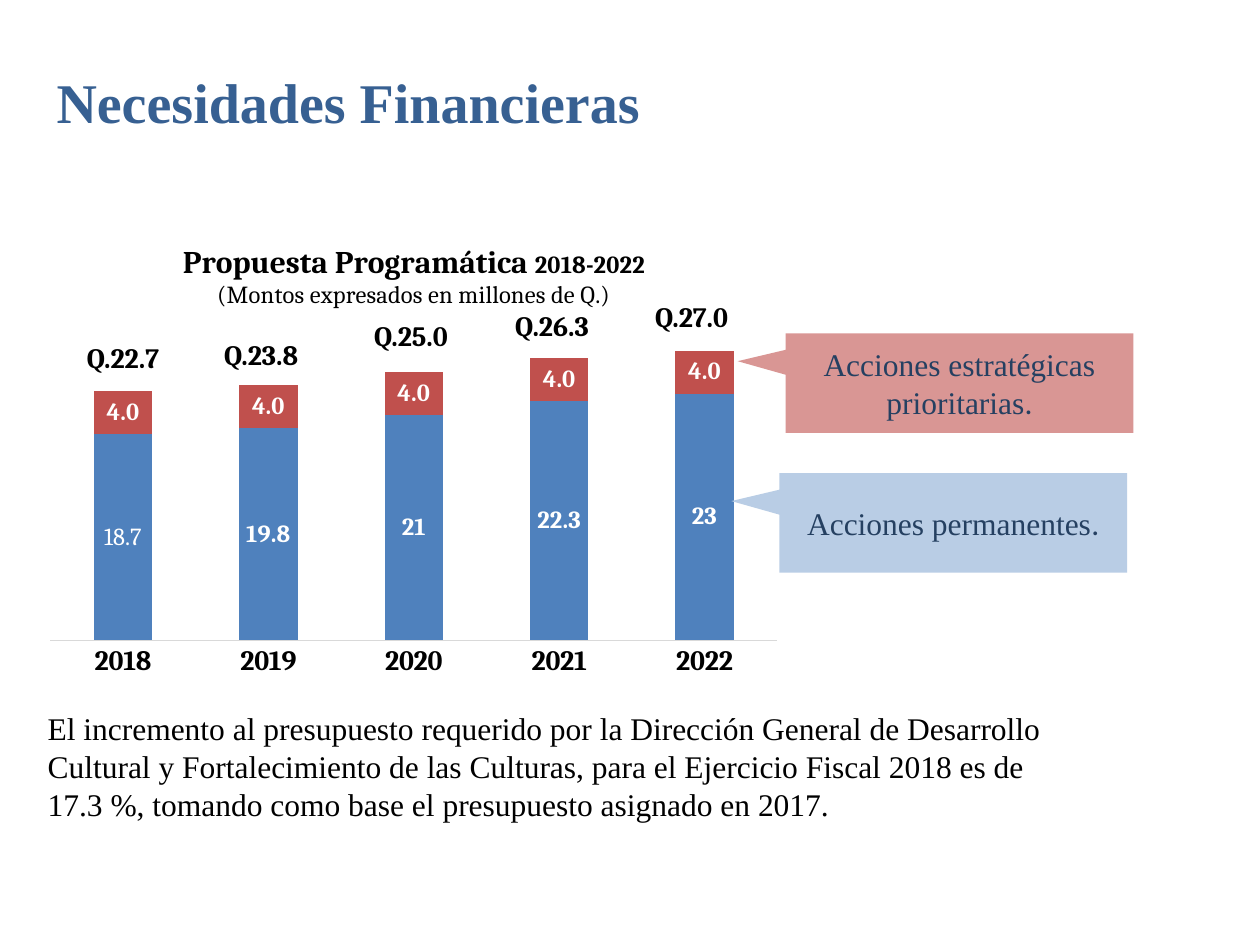
from lxml import etree
from pptx import Presentation
from pptx.chart.data import CategoryChartData
from pptx.dml.color import RGBColor
from pptx.enum.chart import XL_CHART_TYPE, XL_LABEL_POSITION, XL_TICK_MARK
from pptx.enum.shapes import MSO_SHAPE
from pptx.enum.text import MSO_ANCHOR, PP_ALIGN
from pptx.oxml.ns import qn
from pptx.util import Inches, Pt

SERIF = "Times New Roman"
CHART_FONT = "Cambria"
BLACK, WHITE, NAVY = "000000", "FFFFFF", "254061"

YEARS = ["2018", "2019", "2020", "2021", "2022"]
PERMANENT = [19.2, 19.8, 21, 22.3, 23]
STRATEGIC = [4, 4, 4, 4, 4]
TOTALS = [
    ("Q.22.7", 0.59, 2.65),
    ("Q.23.8", 1.68, 2.63),
    ("Q.25.0", 2.87, 2.48),
    ("Q.26.3", 3.99, 2.40),
    ("Q.27.0", 5.10, 2.33),
]


def color(hex_string):
    return RGBColor.from_string(hex_string)


def style_font(font, size, name, hex_string, bold=False):
    font.size = Pt(size)
    font.name = name
    font.bold = bold
    font.color.rgb = color(hex_string)


def add_run(paragraph, text, size, name, hex_string, bold=False):
    run = paragraph.add_run()
    run.text = text
    style_font(run.font, size, name, hex_string, bold)


def add_text(slide, box, text, size, name, hex_string, bold=False, anchor=MSO_ANCHOR.TOP):
    shape = slide.shapes.add_textbox(*map(Inches, box))
    frame = shape.text_frame
    frame.word_wrap = True
    frame.vertical_anchor = anchor
    add_run(frame.paragraphs[0], text, size, name, hex_string, bold)


def set_layout(element, position, **settings):
    """Place a chart part by fractions of the chart area."""
    for old_layout in element.findall(qn("c:layout")):
        element.remove(old_layout)
    layout = etree.Element(qn("c:layout"))
    manual = etree.SubElement(layout, qn("c:manualLayout"))
    for tag, value in settings.items():
        etree.SubElement(manual, qn("c:" + tag)).set("val", str(value))
    element.insert(position, layout)


def add_chart_title(chart):
    title = chart.chart_title
    frame = title.text_frame
    heading = frame.paragraphs[0]
    add_run(heading, "Propuesta Programática ", 18, CHART_FONT, BLACK, True)
    add_run(heading, "2018-2022", 14, CHART_FONT, BLACK, True)
    add_run(frame.add_paragraph(), "(Montos expresados en millones de Q.)", 14, CHART_FONT, BLACK)
    set_layout(title._element, 1, xMode="edge", yMode="edge", x=0.19, y=0.05)


def add_budget_chart(slide, box):
    data = CategoryChartData()
    data.categories = YEARS
    data.add_series("Series 1", PERMANENT)
    data.add_series("Series 2", STRATEGIC)
    chart = slide.shapes.add_chart(
        XL_CHART_TYPE.COLUMN_STACKED, *map(Inches, box), data
    ).chart
    style_font(chart.font, 10, CHART_FONT, BLACK)
    chart.has_legend = False
    add_chart_title(chart)

    # Axes
    years = chart.category_axis
    years.major_tick_mark = years.minor_tick_mark = XL_TICK_MARK.NONE
    style_font(years.tick_labels.font, 16, CHART_FONT, BLACK, True)
    years.format.line.color.rgb = color("D9D9D9")
    years.format.line.width = Pt(0.75)
    amounts = chart.value_axis
    amounts.minimum_scale, amounts.maximum_scale = 0, 30
    amounts.has_major_gridlines = False
    amounts.visible = False

    # Columns and their labels
    plot = chart.plots[0]
    plot.gap_width, plot.overlap = 150, 100
    plot.vary_by_categories = False
    for series, fill, number_format in zip(
        plot.series, ("4F81BD", "C0504D"), ("General", "0.0")
    ):
        series.format.fill.solid()
        series.format.fill.fore_color.rgb = color(fill)
        labels = series.data_labels
        labels.show_value = True
        labels.number_format = number_format
        labels.number_format_is_linked = False
        labels.position = XL_LABEL_POSITION.CENTER
        style_font(labels.font, 14, CHART_FONT, WHITE, True)

    first_label = plot.series[0].points[0].data_label
    add_run(first_label.text_frame.paragraphs[0], "18.7", 14, CHART_FONT, WHITE)
    first_label.position = XL_LABEL_POSITION.CENTER

    plot_area = chart._chartSpace.find(".//" + qn("c:plotArea"))
    set_layout(plot_area, 0, layoutTarget="inner", xMode="edge", yMode="edge",
               x=0.02, y=0.22, w=0.96, h=0.68)


def add_totals(slide):
    for text, left, top in TOTALS:
        add_text(slide, (left, top, 0.85, 0.37), text, 16, CHART_FONT, BLACK, True)


def add_callout(slide, box, text, fill):
    """Turned callout: its pointer faces left and its text stays level."""
    shape = slide.shapes.add_shape(MSO_SHAPE.RECTANGULAR_CALLOUT, *map(Inches, box))
    shape.rotation = 90
    shape.adjustments[0], shape.adjustments[1] = -0.219, 0.638
    shape.shadow.inherit = False
    shape.fill.solid()
    shape.fill.fore_color.rgb = color(fill)
    shape.line.fill.background()
    frame = shape.text_frame
    frame.word_wrap = True
    frame.vertical_anchor = MSO_ANCHOR.MIDDLE
    frame._txBody.bodyPr.set("vert", "vert270")
    paragraph = frame.paragraphs[0]
    paragraph.alignment = PP_ALIGN.CENTER
    add_run(paragraph, text, 18, SERIF, NAVY)
    add_run(paragraph, ".", 18, "Calibri", NAVY)


def main():
    presentation = Presentation()
    presentation.slide_width, presentation.slide_height = Inches(10), Inches(7.5)
    slide = presentation.slides.add_slide(presentation.slide_layouts[6])

    # Heading and closing note
    add_text(slide, (0.35, 0.21, 5.91, 1.18), "Necesidades Financieras",
             32, SERIF, "376092", True, MSO_ANCHOR.MIDDLE)
    add_text(slide, (0.28, 5.58, 8.43, 1.01),
             "El incremento al presupuesto requerido por la Dirección General de "
             "Desarrollo Cultural y Fortalecimiento de las Culturas, para el Ejercicio "
             "Fiscal 2018 es de 17.3 %, tomando como base el presupuesto asignado en 2017.",
             18, SERIF, BLACK)

    # Chart with totals above the columns
    add_budget_chart(slide, (0.28, 1.7, 6.01, 3.76))
    add_totals(slide)

    # Callouts that name the two series
    add_callout(slide, (7.22, 1.66, 0.79, 2.76), "Acciones estratégicas prioritarias", "D99694")
    add_callout(slide, (7.17, 2.77, 0.79, 2.76), "Acciones permanentes", "B9CDE5")

    presentation.save("out.pptx")


if __name__ == "__main__":
    main()
